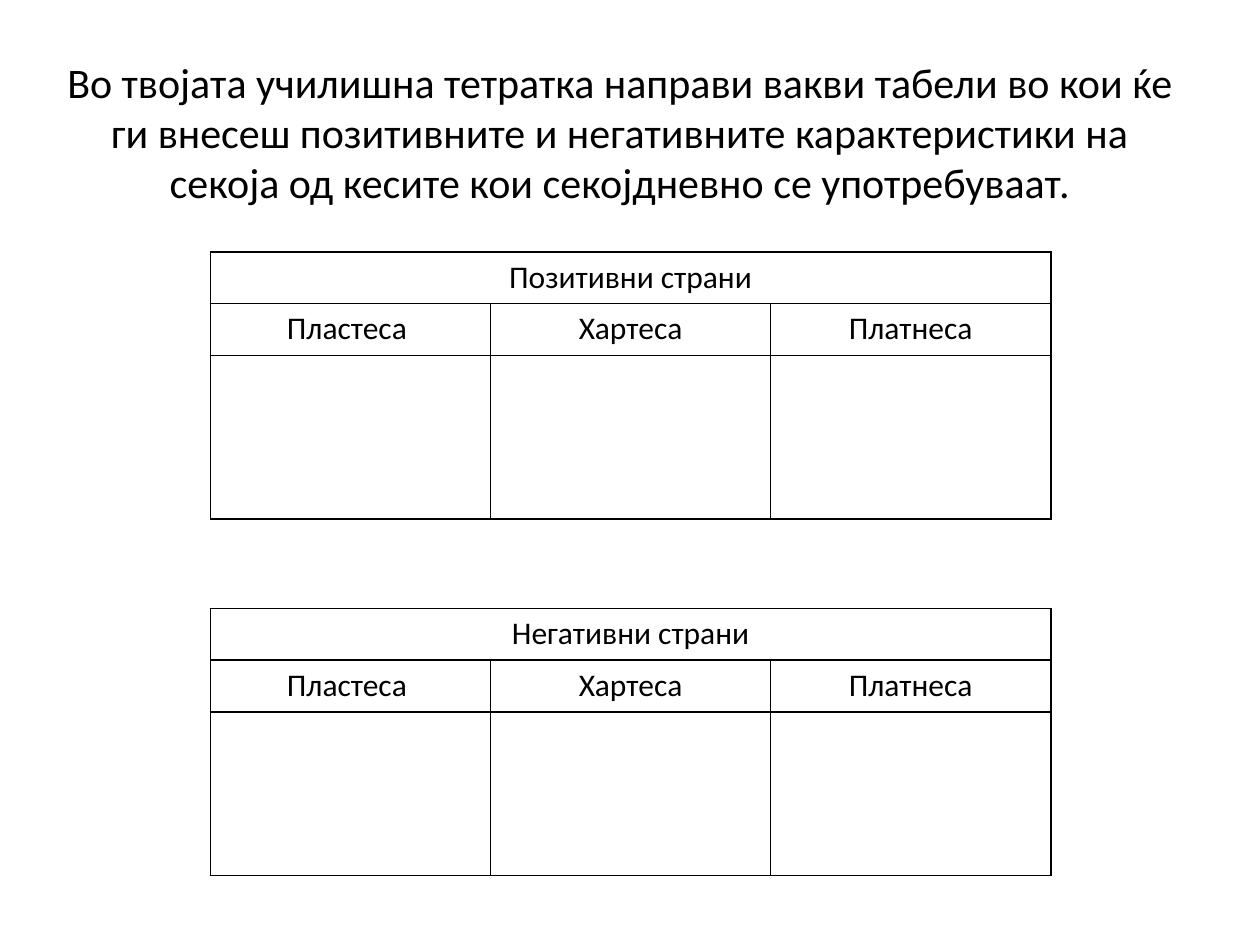
from dataclasses import dataclass

from lxml.etree import SubElement
from pptx import Presentation
from pptx.dml.color import RGBColor
from pptx.enum.text import MSO_ANCHOR, PP_ALIGN
from pptx.oxml.ns import qn
from pptx.util import Inches, Pt

# Content
TITLE = ("Во твојата училишна тетратка направи вакви табели во кои ќе ги внесеш "
         "позитивните и негативните карактеристики на секоја од кесите кои "
         "секојдневно се употребуваат.")
BAGS = ["Пластеса ", "Хартеса", "Платнеса"]
TABLES = [("Позитивни страни", 2.0), ("Негативни страни", 4.83)]  # heading, top

# Layout in inches
TABLE_LEFT, TABLE_WIDTH = 1.67, 6.67
ROW_HEIGHTS = [0.41, 0.41, 1.3]


@dataclass(frozen=True)
class Theme:
    font: str = "Calibri"
    ink: str = "000000"
    title_size: int = 24
    cell_size: int = 18
    border: int = 1


THEME = Theme()


def add_text(tf, text, size):
    p = tf.paragraphs[0]
    p.alignment = PP_ALIGN.CENTER
    r = p.add_run()
    r.text = text
    r.font.name = THEME.font
    r.font.size = Pt(size)
    r.font.color.rgb = RGBColor.from_string(THEME.ink)


def set_borders(cell):
    tc_pr = cell._tc.get_or_add_tcPr()
    for side in ("lnL", "lnR", "lnT", "lnB"):
        ln = SubElement(tc_pr, qn(f"a:{side}"), w=str(Pt(THEME.border)))
        fill = SubElement(ln, qn("a:solidFill"))
        SubElement(fill, qn("a:srgbClr"), val=THEME.ink)


def add_side_table(s, heading, top):
    frame = s.shapes.add_table(len(ROW_HEIGHTS), len(BAGS), Inches(TABLE_LEFT), Inches(top),
                               Inches(TABLE_WIDTH), Inches(sum(ROW_HEIGHTS)))
    table = frame.table
    table.first_row = table.horz_banding = False
    for row, height in zip(table.rows, ROW_HEIGHTS):
        row.height = Inches(height)
    for cell in table.iter_cells():
        set_borders(cell)
        cell.fill.background()

    # Heading across all columns, then one column per bag
    table.cell(0, 0).merge(table.cell(0, len(BAGS) - 1))
    add_text(table.cell(0, 0).text_frame, heading, THEME.cell_size)
    for col, bag in enumerate(BAGS):
        add_text(table.cell(1, col).text_frame, bag, THEME.cell_size)


def main():
    prs = Presentation()
    prs.slide_width, prs.slide_height = Inches(10), Inches(7.5)
    s = prs.slides.add_slide(prs.slide_layouts[6])

    # Title
    sp = s.shapes.add_textbox(Inches(0.42), Inches(0.42), Inches(9), Inches(1.25))
    tf = sp.text_frame
    tf.word_wrap = True
    tf.vertical_anchor = MSO_ANCHOR.MIDDLE
    add_text(tf, TITLE, THEME.title_size)

    # Tables
    for heading, top in TABLES:
        add_side_table(s, heading, top)

    prs.save("out.pptx")


if __name__ == "__main__":
    main()
